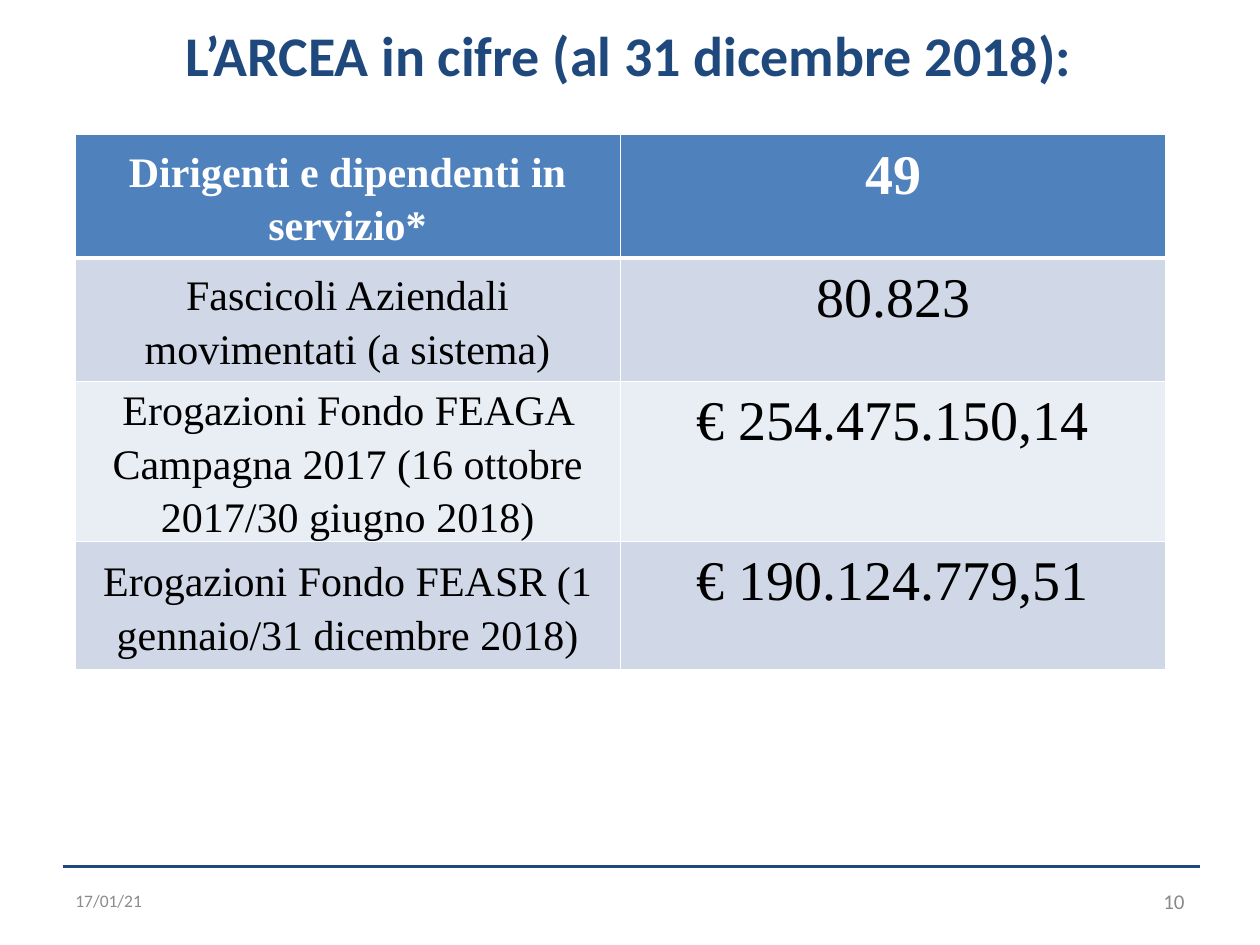
from lxml.etree import SubElement
from pptx import Presentation
from pptx.dml.color import RGBColor
from pptx.enum.shapes import MSO_CONNECTOR
from pptx.enum.text import MSO_ANCHOR, MSO_AUTO_SIZE, PP_ALIGN
from pptx.oxml.ns import qn
from pptx.util import Pt

TITLE = "L’ARCEA in cifre (al 31 dicembre 2018):"
FIGURES = [
    ("Dirigenti e dipendenti in servizio*", "49"),
    ("Fascicoli Aziendali movimentati (a sistema)", "80.823"),
    ("Erogazioni Fondo FEAGA Campagna 2017 (16 ottobre 2017/30 giugno 2018)",
     "€ 254.475.150,14"),
    ("Erogazioni Fondo FEASR (1 gennaio/31 dicembre 2018)",
     "€ 190.124.779,51"),
]
FOOTERS = [
    ("17/01/21", 36, 10, "8C8C8C", PP_ALIGN.LEFT),
    ("10", 516, 12, "898989", PP_ALIGN.RIGHT),
]
ROW_HEIGHTS = [70.5, 70.5, 91.5, 73.5]
COLUMN_WIDTH = 311.75
NAVY, WHITE, BLACK = "1F497D", "FFFFFF", "000000"
HEADER_FILL, BAND_FILLS = "4F81BD", ("E9EDF4", "D0D8E8")
COLUMNS = [(24, MSO_ANCHOR.MIDDLE), (32, MSO_ANCHOR.TOP)]


def color(value):
    return RGBColor.from_string(value)


def apply(target, values):
    for name, value in values.items():
        setattr(target, name, value)


def write(frame, text, size, font_name, ink, align, bold=False, **spacing):
    paragraph = frame.paragraphs[0]
    apply(paragraph, {"alignment": align, **spacing})
    run = paragraph.add_run()
    run.text = text
    apply(run.font, {"size": Pt(size), "name": font_name, "bold": bold})
    run.font.color.rgb = color(ink)


def add_borders(cell, bottom_width):
    properties = cell._tc.get_or_add_tcPr()
    sides = [("a:lnL", 1), ("a:lnR", 1), ("a:lnT", 1), ("a:lnB", bottom_width)]
    for side, width in sides:
        border = SubElement(properties, qn(side), w=str(Pt(width)))
        fill = SubElement(border, qn("a:solidFill"))
        SubElement(fill, qn("a:srgbClr"), val=WHITE)


def add_title(slide):
    title = slide.shapes.title
    apply(title, {"left": Pt(7), "top": Pt(8), "width": Pt(705), "height": Pt(58)})
    apply(title.text_frame, {"vertical_anchor": MSO_ANCHOR.TOP, "word_wrap": True,
                             "auto_size": MSO_AUTO_SIZE.NONE})
    write(title.text_frame, TITLE, 32, "Calibri", NAVY, PP_ALIGN.CENTER, True)


def add_figures(slide):
    table = slide.shapes.add_table(
        len(FIGURES), len(COLUMNS), Pt(42.75), Pt(77),
        Pt(COLUMN_WIDTH * len(COLUMNS)), Pt(sum(ROW_HEIGHTS))).table
    for column in table.columns:
        column.width = Pt(COLUMN_WIDTH)
    for row_index, figure in enumerate(FIGURES):
        header = row_index == 0
        table.rows[row_index].height = Pt(ROW_HEIGHTS[row_index])
        for column_index, (size, anchor) in enumerate(COLUMNS):
            cell = table.cell(row_index, column_index)
            apply(cell, {"margin_left": Pt(5), "margin_right": Pt(5),
                         "margin_top": 0, "margin_bottom": 0,
                         "vertical_anchor": anchor})
            write(cell.text_frame, figure[column_index], size, "Times New Roman",
                  WHITE if header else BLACK, PP_ALIGN.CENTER, header,
                  line_spacing=1.15, space_after=Pt(10))
            add_borders(cell, 3 if header else 1)
            cell.fill.solid()
            cell.fill.fore_color.rgb = color(
                HEADER_FILL if header else BAND_FILLS[row_index % 2])


def add_footer(slide):
    rule = slide.shapes.add_connector(
        MSO_CONNECTOR.STRAIGHT, Pt(36), Pt(495.25), Pt(686), Pt(495.25))
    rule.line.color.rgb = color(NAVY)
    rule.line.width = Pt(1.5)
    SubElement(rule._element.spPr, qn("a:effectLst"))
    for text, left, size, ink, align in FOOTERS:
        frame = slide.shapes.add_textbox(
            Pt(left), Pt(500.5), Pt(168), Pt(28.75)).text_frame
        apply(frame, {"word_wrap": True, "vertical_anchor": MSO_ANCHOR.MIDDLE})
        write(frame, text, size, "Calibri", ink, align)


def main():
    presentation = Presentation()
    apply(presentation, {"slide_width": Pt(720), "slide_height": Pt(540)})
    slide = presentation.slides.add_slide(presentation.slide_layouts[5])
    add_title(slide)
    add_figures(slide)
    add_footer(slide)
    presentation.save("out.pptx")


if __name__ == "__main__":
    main()
